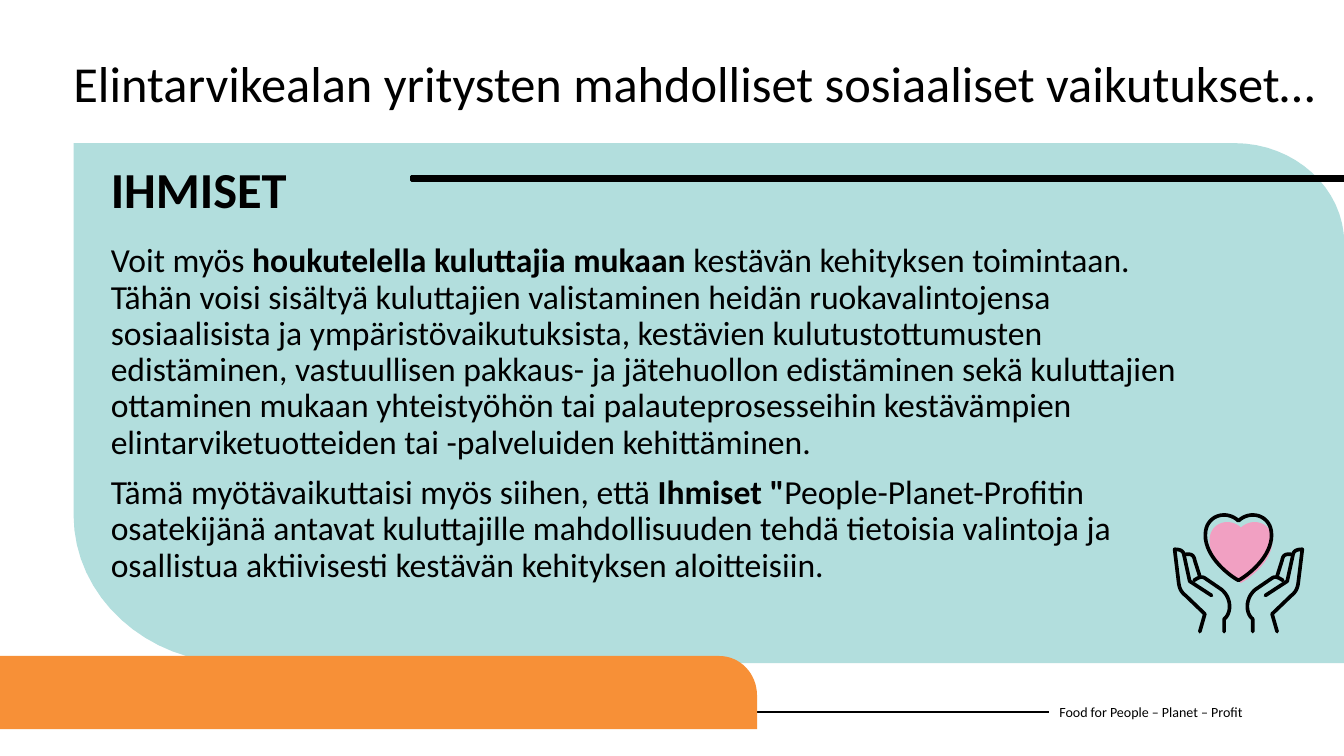
"""Build a slide on the social effects of food companies."""
from lxml import etree
from pptx import Presentation, util as u
from pptx.dml.color import RGBColor
from pptx.enum import shapes, text
from pptx.oxml.ns import qn

rgb = RGBColor.from_string
INK, MINT, ORANGE, PINK = "000000", "B2DEDD", "F79037", "F1A0C2"

deck = Presentation()
deck.slide_width, deck.slide_height = u.Inches(13.33), u.Inches(7.5)
slide = deck.slides.add_slide(deck.slide_layouts[6])
cell = deck.slide_height / 90


def write(words, x, y, w, h, size, bold=False, lead=None, gap=0,
          anchor=text.MSO_ANCHOR.TOP):
    """Add a text box; ** switches bold on and off."""
    box = slide.shapes.add_textbox(*[round(n * cell) for n in (x, y, w, h)])
    frame = box.text_frame
    frame.word_wrap, frame.vertical_anchor = True, anchor
    for row, line in enumerate(words.split("\n")):
        para = frame.paragraphs[0] if row == 0 else frame.add_paragraph()
        para.line_spacing, para.space_before = lead, u.Pt(gap)
        for turn, part in enumerate(line.split("**")):
            run = para.add_run()
            run.text = part
            run.font.name, run.font.size = "Calibri", u.Pt(size)
            run.font.bold = bold or turn % 2 == 1
            run.font.color.rgb = rgb(INK)
    return box


def trace(steps, fill=None, width=0, close=True):
    """Draw an outline; pairs are corners, sixes are Bézier curves."""
    dots = [steps[0]]
    for step in steps[1:]:
        if len(step) == 2:
            dots.append(step)
            continue
        nodes = [dots[-1], step[:2], step[2:4], step[4:]]
        for t in [n / 16 for n in range(1, 17)]:
            mix = ((1 - t) ** 3, 3 * t * (1 - t) ** 2, 3 * t * t * (1 - t), t ** 3)
            dots.append(tuple(sum(m * node[k] for m, node in zip(mix, nodes))
                              for k in (0, 1)))
    dots = [(x * cell, y * cell) for x, y in dots]
    pen = slide.shapes.build_freeform(*dots[0])
    pen.add_line_segments(dots[1:], close=close)
    form = pen.convert_to_shape()
    form.shadow.inherit = False
    if fill:
        form.fill.solid()
        form.fill.fore_color.rgb = rgb(fill)
    else:
        form.fill.background()
    if width:
        form.line.color.rgb = rgb(INK)
        form.line.width = u.Pt(width)
        edge = form._element.spPr.find(qn("a:ln"))
        edge.set("cap", "rnd")
        etree.SubElement(edge, qn("a:round"))
    else:
        form.line.fill.background()


foot = write("Food for People – Planet – Profit", 124.9, 82.4, 32.8, 4.8, 10,
             anchor=text.MSO_ANCHOR.MIDDLE)
rule = slide.shapes.add_connector(
    shapes.MSO_CONNECTOR.STRAIGHT, 0, round(84.8 * cell),
    round(124.9 * cell), round(84.8 * cell))
rule.end_connect(foot, 1)
rule.line.color.rgb = rgb(INK)
rule.line.width = u.Pt(1.5)
etree.SubElement(rule._element.spPr, qn("a:effectLst"))

trace([(8.76, 17.04), (146.9, 17.04), (154.1, 17.04, 160, 22.4, 160, 29),
       (160, 78.96), (28.1, 78.96), (17.4, 78.96, 8.76, 71, 8.76, 61.3)], MINT)
trace([(0, 86.8), (0, 78.1), (85.6, 78.1),
       (88.1, 78.1, 90.1, 80.2, 90.1, 82.8), (90.1, 86.8)], ORANGE)

bar = slide.shapes.add_shape(shapes.MSO_SHAPE.RECTANGLE, *[
    round(n * cell) for n in (49, 21, 111, 0.48)])
bar.shadow.inherit = False
bar.fill.solid()
bar.fill.fore_color.rgb = rgb(INK)
bar.line.color.rgb = rgb(INK)
bar.line.width = u.Pt(1.93)

write("Voit myös **houkutelella kuluttajia mukaan **kestävän kehityksen toimintaan. "
      "Tähän voisi sisältyä kuluttajien valistaminen heidän ruokavalintojensa "
      "sosiaalisista ja ympäristövaikutuksista, kestävien kulutustottumusten "
      "edistäminen, vastuullisen pakkaus- ja jätehuollon edistäminen sekä "
      "kuluttajien ottaminen mukaan yhteistyöhön tai palauteprosesseihin "
      "kestävämpien elintarviketuotteiden tai -palveluiden kehittäminen.\n"
      "Tämä myötävaikuttaisi myös siihen, että **Ihmiset \"**People-Planet-Profitin "
      "osatekijänä antavat kuluttajille mahdollisuuden tehdä tietoisia valintoja "
      "ja osallistua aktiivisesti kestävän kehityksen aloitteisiin.",
      12, 28.44, 129.5, 45.1, 24, lead=0.9, gap=10)
write("Elintarvikealan yritysten mahdolliset sosiaaliset vaikutukset…",
      7.56, 6.48, 152.4, 10.56, 36, lead=0.9, gap=10)
write("IHMISET", 12, 18.24, 32, 8.5, 36, bold=True)

axis = 147.4
heart = [(axis, 62), (148.8, 60.7, 151, 61.3, 151.3, 63.2),
         (151.7, 65.8, 149, 68.2, axis, 69.1),
         (145.8, 68.2, 143.1, 65.8, 143.5, 63.2),
         (143.8, 61.3, 146, 60.7, axis, 62)]
blush = [tuple(69.4 + (n - 69.1) * 0.93 if k % 2 else axis + 0.3 + (n - axis) * 0.95
               for k, n in enumerate(step)) for step in heart]
trace(blush, PINK)
trace(heart, width=2.6)

edge = [(142.8, 75.2), (143.4, 73.1), (141.1, 70.9),
        (140.6, 70.5, 140.4, 70.1, 140.3, 69.5), (139.8, 65.4),
        (140.3, 65.4, 140.8, 65.5, 140.9, 66), (141.6, 69.2), (144.2, 70.9)]
palm = [(145.7, 75.2), (145.7, 73.7), (146.6, 73, 146.6, 71.2, 145.4, 70.2),
        (143.5, 68.9), (143, 68.5, 142.6, 68.8, 142.1, 69.1)]
finger = [(141.1, 66), (141.8, 65.9, 142.1, 66.1, 142.2, 66.7), (142.8, 68.6)]
for stroke in (edge, palm, finger):
    twin = [tuple(n if k % 2 else 2 * axis - n for k, n in enumerate(step))
            for step in stroke]
    for side in (stroke, twin):
        trace(side, width=2.6, close=False)

deck.save("out.pptx")
